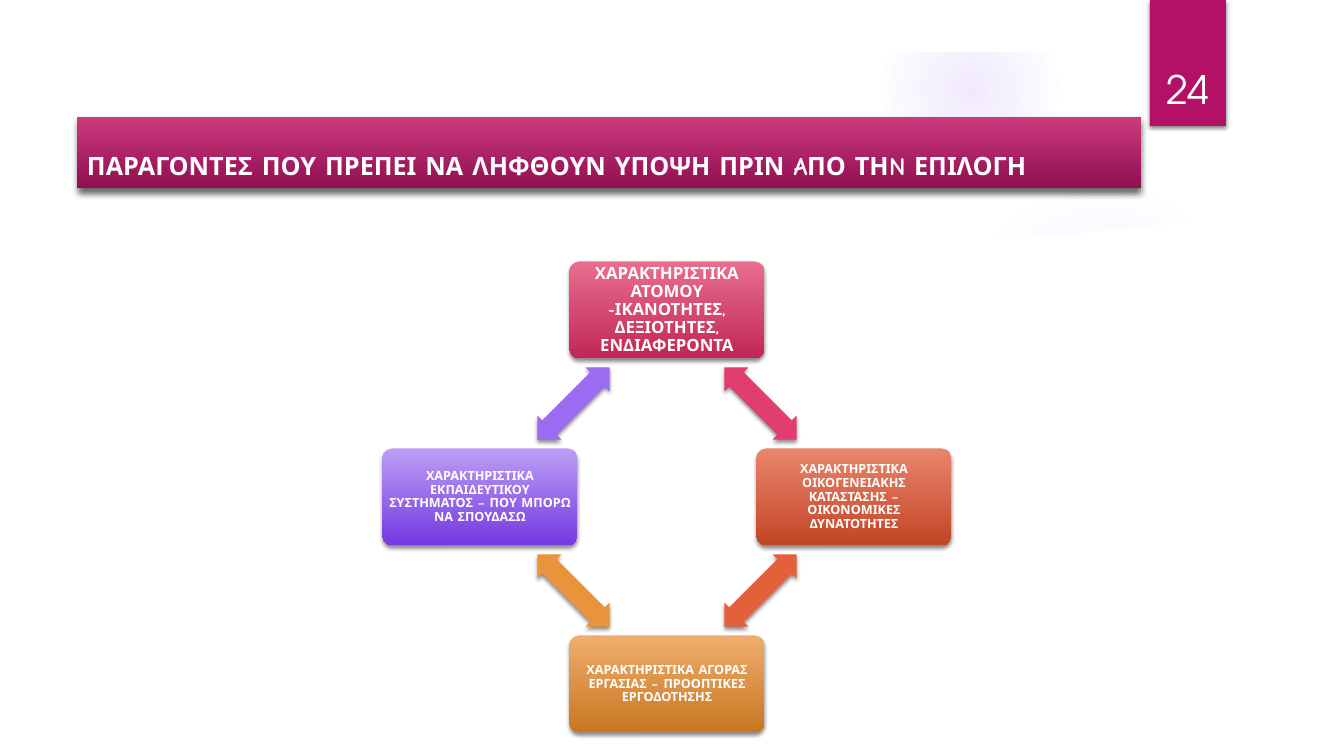
import lxml.etree
import pptx
import pptx.dml.color
import pptx.enum.shapes
import pptx.enum.text
import pptx.oxml
import pptx.oxml.ns
import pptx.util

PX = 914400 / 100.8
SHAPE = pptx.enum.shapes.MSO_SHAPE
ANCHOR = pptx.enum.text.MSO_ANCHOR
ALIGN = pptx.enum.text.PP_ALIGN
NS = pptx.oxml.ns.nsdecls("a")
WHITE = "FFFFFF"

deck = pptx.Presentation()
deck.slide_width, deck.slide_height = int(1344 * PX), int(756 * PX)
slide = deck.slides.add_slide(deck.slide_layouts[6])


def add_block(kind, box, colors, shadow=None):
    """Add a shape with one flat colour or a top-to-bottom pair; shadow is (alpha %, blur pt, distance pt)."""
    block = slide.shapes.add_shape(kind, *(int(v * PX) for v in box))
    block.shadow.inherit = False
    block.line.fill.background()
    if len(colors) == 1:
        block.fill.solid()
        block.fill.fore_color.rgb = pptx.dml.color.RGBColor.from_string(colors[0])
    else:
        block.fill.gradient()
        block.fill.gradient_angle = 270
        for stop, color in zip(block.fill.gradient_stops, colors):
            stop.color.rgb = pptx.dml.color.RGBColor.from_string(color)
    if shadow:
        alpha, blur, distance = shadow
        effects = block._element.spPr.find(pptx.oxml.ns.qn("a:effectLst"))
        effects.append(pptx.oxml.parse_xml(
            f'<a:outerShdw {NS} blurRad="{blur * 12700}" dist="{distance * 12700}" dir="5400000" '
            f'algn="ctr" rotWithShape="0"><a:srgbClr val="000000"><a:alpha val="{alpha * 1000}"/>'
            '</a:srgbClr></a:outerShdw>'))
    return block


def write(block, text, size, font="Comic Neue", bold=True, align=ALIGN.CENTER,
          anchor=ANCHOR.MIDDLE, insets=(10, 5, 10, 5), spacing=1.0):
    frame = block.text_frame
    frame.word_wrap = True
    frame.vertical_anchor = anchor
    frame.margin_left, frame.margin_top, frame.margin_right, frame.margin_bottom = (
        int(v * PX) for v in insets)
    paragraph = frame.paragraphs[0]
    paragraph.alignment = align
    paragraph.line_spacing = spacing
    run = paragraph.add_run()
    run.text = text
    run.font.name, run.font.size, run.font.bold = font, pptx.util.Pt(size), bold
    run.font.color.rgb = pptx.dml.color.RGBColor.from_string(WHITE)


# Soft violet glows: box, then (position %, alpha %) of each stop
glows = [
    ((949, 184, 310, 310), [(0, 7), (36, 6), (69, 0)]),
    ((882, 1, 176, 176), [(0, 14), (36, 7), (73, 0)]),
]
for box, stops in glows:
    glow = add_block(SHAPE.OVAL, box, ["9B6BF2"])
    solid = glow._element.spPr.find(pptx.oxml.ns.qn("a:solidFill"))
    stop_xml = "".join(
        f'<a:gs pos="{position * 1000}"><a:srgbClr val="9B6BF2"><a:alpha val="{alpha * 1000}"/>'
        '</a:srgbClr></a:gs>' for position, alpha in stops)
    radial = pptx.oxml.parse_xml(
        f'<a:gradFill {NS} rotWithShape="1"><a:gsLst>{stop_xml}</a:gsLst><a:path path="circle">'
        '<a:fillToRect l="50000" t="50000" r="50000" b="50000"/></a:path></a:gradFill>')
    solid.getparent().replace(solid, radial)

# White page with a curved upper edge, and the white band along the top
outline = slide.shapes.build_freeform(50, 206, scale=PX)
outline.add_line_segments([
    (50, 706), (1294, 706), (1294, 206), (1210, 219), (1125, 229), (1040, 237), (956, 243),
    (847, 248), (714, 250), (587, 249), (448, 243), (324, 235), (218, 226), (114, 214)])
page = outline.convert_to_shape()
page.shadow.inherit = False
page.line.fill.background()
page.fill.solid()
page.fill.fore_color.rgb = pptx.dml.color.RGBColor.from_string(WHITE)
add_block(SHAPE.RECTANGLE, (0, 0, 1344, 52), [WHITE])

SOFT = (45, 3, 2)
number_tag = add_block(SHAPE.RECTANGLE, (1150, 0, 76, 126), ["B31166"], SOFT)
write(number_tag, "24", 28, font="TeX Gyre Adventor", bold=False,
      anchor=ANCHOR.BOTTOM, insets=(0, 5, 0, 14))

heading = add_block(SHAPE.RECTANGLE, (77, 117, 1064, 71), ["CB3B7C", "900E52"], (60, 5, 3))
write(heading, "ΠΑΡΑΓΟΝΤΕΣ ΠΟΥ ΠΡΕΠΕΙ ΝΑ ΛΗΦΘΟΥΝ ΥΠΟΨΗ ΠΡΙΝ AΠΟ ΤΗN ΕΠΙΛΟΓΗ", 18,
      align=ALIGN.LEFT, insets=(10, 30, 10, 5))

# Cycle of factors, clockwise from the top; each arrow leads to the next factor
CENTER_X, CENTER_Y, RADIUS = 667, 497, 187
BOX_W, BOX_H, ARROW_W, ARROW_H = 195, 97, 102, 34
directions = [(0, -1), (1, 0), (0, 1), (-1, 0)]
factors = [
    ("ΧΑΡΑΚΤΗΡΙΣΤΙΚΑ ΑΤΟΜΟΥ -ΙΚΑΝΟΤΗΤΕΣ, ΔΕΞΙΟΤΗΤΕΣ, ΕΝΔΙΑΦΕΡΟΝΤΑ",
     12, ["E96E90", "C22655"], "E33D6F"),
    ("ΧΑΡΑΚΤΗΡΙΣΤΙΚΑ ΟΙΚΟΓΕΝΕΙΑΚΗΣ ΚΑΤΑΣΤΑΣΗΣ – ΟΙΚΟΝΟΜΙΚΕΣ ΔΥΝΑΤΟΤΗΤΕΣ",
     9, ["EA856D", "C24525"], "E45F3C"),
    ("ΧΑΡΑΚΤΗΡΙΣΤΙΚΑ ΑΓΟΡΑΣ ΕΡΓΑΣΙΑΣ – ΠΡΟΟΠΤΙΚΕΣ ΕΡΓΟΔΟΤΗΣΗΣ",
     9, ["EEAD6D", "C97721"], "E9943A"),
    ("ΧΑΡΑΚΤΗΡΙΣΤΙΚΑ ΕΚΠΑΙΔΕΥΤΙΚΟΥ ΣΥΣΤΗΜΑΤΟΣ – ΠΟΥ ΜΠΟΡΩ ΝΑ ΣΠΟΥΔΑΣΩ",
     9, ["BD9EF6", "7438E0"], "9B6BF2"),
]
for i, (text, size, colors, arrow_color) in enumerate(factors):
    dx, dy = directions[i]
    factor = add_block(
        SHAPE.ROUNDED_RECTANGLE,
        (CENTER_X + dx * RADIUS - BOX_W / 2, CENTER_Y + dy * RADIUS - BOX_H / 2, BOX_W, BOX_H),
        colors, SOFT)
    factor.adjustments[0] = 0.1
    write(factor, text, size, insets=(3, 3, 3, 3), spacing=0.9)

    next_dx, next_dy = directions[(i + 1) % 4]
    arrow_x = CENTER_X + (dx + next_dx) * RADIUS / 2
    arrow_y = CENTER_Y + (dy + next_dy) * RADIUS / 2
    arrow = add_block(
        SHAPE.LEFT_RIGHT_ARROW,
        (arrow_x - ARROW_W / 2, arrow_y - ARROW_H / 2, ARROW_W, ARROW_H), [arrow_color], SOFT)
    arrow.adjustments[0], arrow.adjustments[1] = 0.6, 0.5
    arrow.rotation = 45 + 90 * i

deck.save("out.pptx")
